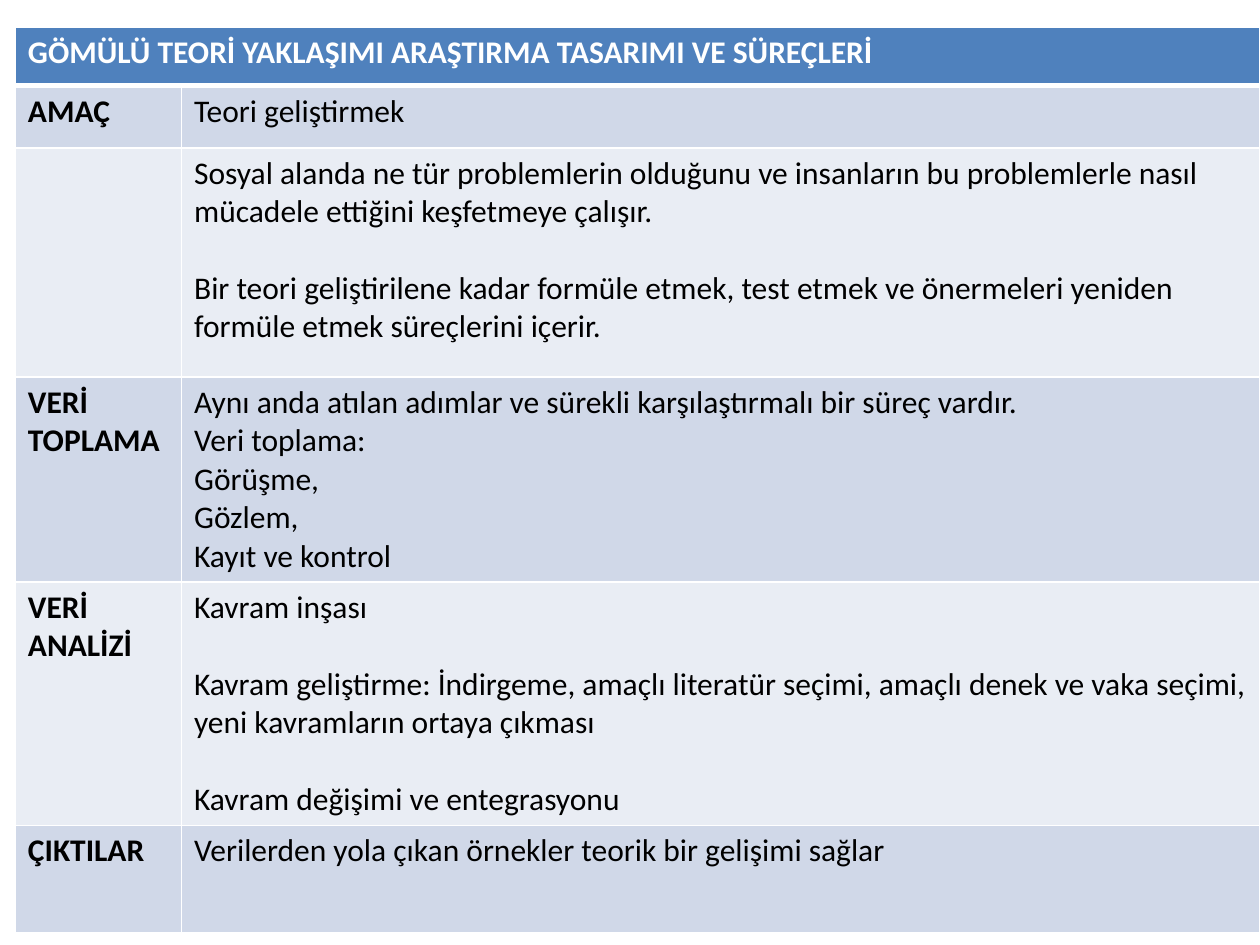
import pptx
import pptx.dml.color
import pptx.oxml
import pptx.oxml.ns
import pptx.util

Cm = pptx.util.Cm
Pt = pptx.util.Pt

WHITE, BLACK = "FFFFFF", "000000"
BLUE, DARK, LIGHT = "4F81BD", "D0D8E8", "E9EDF4"


def color(text):
    return pptx.dml.color.RGBColor.from_string(text)


class Page:
    """Style and current slide."""
    font = "Calibri"
    size = Pt(18)
    gap = Pt(22)  # height of one text line

    def __init__(self, deck):
        self.slide = deck.slides.add_slide(deck.slide_layouts[6])

    def grid(self, left, top, cols, rows):
        frame = self.slide.shapes.add_table(
            len(rows), len(cols), Cm(left), Cm(top), Cm(sum(cols)), Cm(sum(rows)))
        table = frame.table
        for col, width in zip(table.columns, cols):
            col.width = Cm(width)
        for row, height in zip(table.rows, rows):
            row.height = Cm(height)
        return table

    def cell(self, cell, lines, fill, ink=BLACK, bold=False, gaps=False):
        cell.fill.solid()
        cell.fill.fore_color.rgb = color(fill)
        frame = cell.text_frame
        frame.text = "\n".join(lines)
        for i, para in enumerate(frame.paragraphs):
            para.font.name = self.font
            para.font.size = self.size
            para.font.bold = bold
            para.font.color.rgb = color(ink)
            if gaps and i:
                para.space_before = self.gap

    def edges(self, cell, top=1, low=1):
        props = cell._tc.get_or_add_tcPr()
        sides = [("L", 1), ("R", 1), ("T", top), ("B", low)]
        for i, (side, width) in enumerate(sides):
            props.insert(i, pptx.oxml.parse_xml(
                f'<a:ln{side} {pptx.oxml.ns.nsdecls("a")} w="{Pt(width)}">'
                f'<a:solidFill><a:srgbClr val="{WHITE}"/></a:solidFill></a:ln{side}>'))


# Label, lines, row height, blank line between paragraphs
ROWS = [
    ("AMAÇ", ["Teori geliştirmek"], 1.25, False),
    ("", ["Sosyal alanda ne tür problemlerin olduğunu ve insanların bu "
          "problemlerle nasıl mücadele ettiğini keşfetmeye çalışır.",
          "Bir teori geliştirilene kadar formüle etmek, test etmek ve "
          "önermeleri yeniden formüle etmek süreçlerini içerir."], 4.62, True),
    ("VERİ TOPLAMA", ["Aynı anda atılan adımlar ve sürekli karşılaştırmalı "
                      "bir süreç vardır.",
                      "Veri toplama:", "Görüşme,", "Gözlem,",
                      "Kayıt ve kontrol"], 4.13, False),
    ("VERİ ANALİZİ", ["Kavram inşası",
                      "Kavram geliştirme: İndirgeme, amaçlı literatür seçimi, "
                      "amaçlı denek ve vaka seçimi, yeni kavramların ortaya "
                      "çıkması",
                      "Kavram değişimi ve entegrasyonu"], 4.9, True),
    ("ÇIKTILAR", ["Verilerden yola çıkan örnekler teorik bir gelişimi sağlar"],
     2.16, False),
]


def main():
    deck = pptx.Presentation()
    deck.slide_width, deck.slide_height = Cm(25.4), Cm(19.05)
    page = Page(deck)
    table = page.grid(0.31, 0.54, [3.35, 21.74], [1.19] + [row[2] for row in ROWS])

    # Heading across both columns
    head = table.cell(0, 0)
    head.merge(table.cell(0, 1))
    page.cell(head, ["GÖMÜLÜ TEORİ YAKLAŞIMI ARAŞTIRMA TASARIMI VE SÜREÇLERİ"],
              BLUE, WHITE, bold=True)
    for col in range(2):
        page.edges(table.cell(0, col), low=3)

    # Banded rows
    for i, (label, lines, _, gaps) in enumerate(ROWS, 1):
        fill = DARK if i % 2 else LIGHT
        page.cell(table.cell(i, 0), [label], fill, bold=True)
        page.cell(table.cell(i, 1), lines, fill, gaps=gaps)
        for col in range(2):
            page.edges(table.cell(i, col), top=3 if i == 1 else 1)

    deck.save("out.pptx")


if __name__ == "__main__":
    main()
